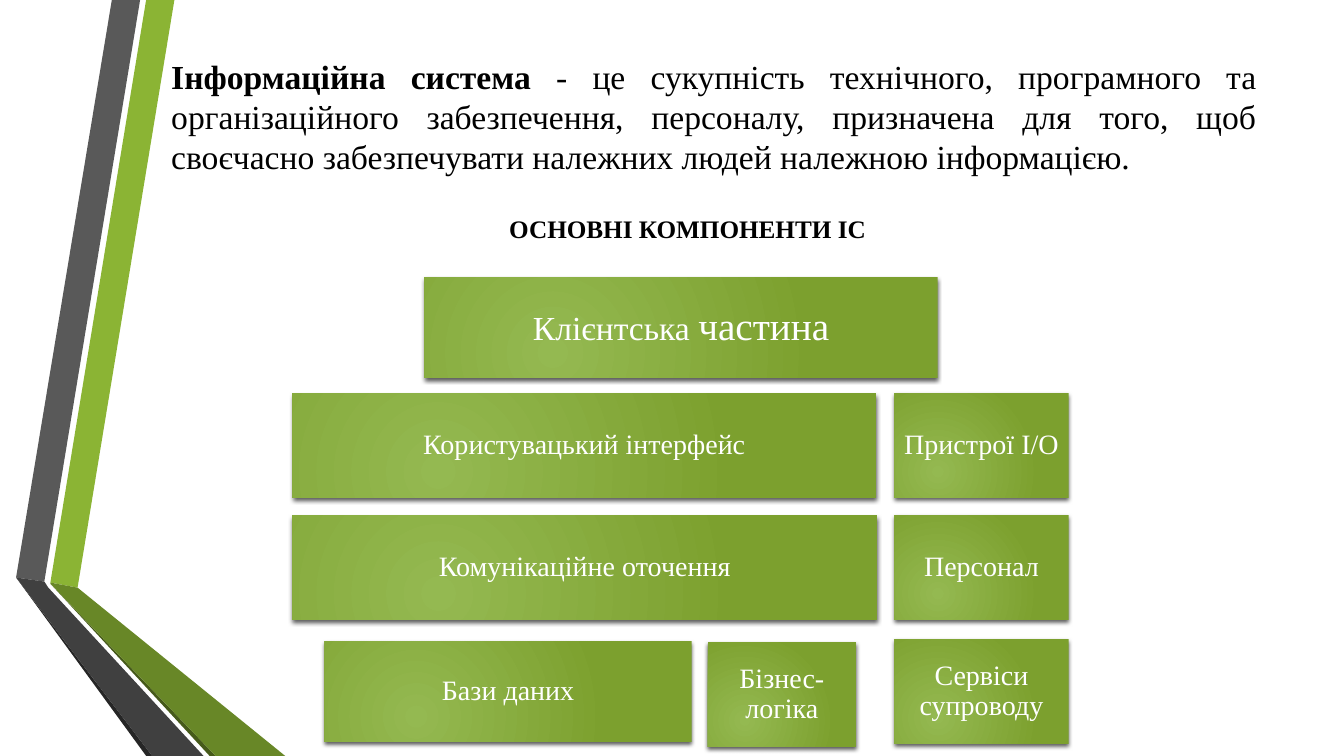
from pptx import Presentation
from pptx.dml.color import RGBColor
from pptx.enum.shapes import MSO_SHAPE as SHAPE
from pptx.enum.text import MSO_ANCHOR as ANCHOR, PP_ALIGN as ALIGN
from pptx.oxml import parse_xml
from pptx.util import Inches, Pt

NS = 'xmlns:a="http://schemas.openxmlformats.org/drawingml/2006/main"'
GRADIENT = f'''<a:gradFill {NS} rotWithShape="1"><a:gsLst>
<a:gs pos="0"><a:srgbClr val="94B951"/></a:gs>
<a:gs pos="100000"><a:srgbClr val="7CA02E"/></a:gs></a:gsLst>
<a:path path="circle"><a:fillToRect l="50000" t="100000" r="100000" b="50000"/></a:path>
</a:gradFill>'''
SHADOW = f'''<a:effectLst {NS}>
<a:outerShdw blurRad="38100" dist="25400" dir="5400000" rotWithShape="0">
<a:srgbClr val="000000"><a:alpha val="64000"/></a:srgbClr></a:outerShdw></a:effectLst>'''


def rgb(value):
    return RGBColor.from_string(value)


def write(sp, runs, align, color, inset=None, **spacing):
    tf = sp.text_frame
    tf.word_wrap = True
    tf.vertical_anchor = ANCHOR.MIDDLE
    if inset is not None:
        for side in ("left", "top", "right", "bottom"):
            setattr(tf, f"margin_{side}", Inches(inset))
    p = tf.paragraphs[0]
    p.alignment = align
    for name, value in spacing.items():
        setattr(p, name, value)
    for text, size, bold in runs:
        r = p.add_run()
        r.text = text
        font = {"name": "Times New Roman", "size": Pt(size), "bold": bold}
        for name, value in font.items():
            setattr(r.font, name, value)
        r.font.color.rgb = rgb(color)


prs = Presentation()
prs.slide_width, prs.slide_height = Inches(13.33), Inches(7.5)
s = prs.slides.add_slide(prs.slide_layouts[6])

ribbons = [
    ("8BB434", [(0.5, 5.78), (0.77, 5.83), (1.73, 0), (1.45, 0)]),
    ("595959", [(1.39, 0), (1.11, 0), (0.16, 5.73), (0.44, 5.77)]),
    ("262626", [(0.16, 5.73), (1.45, 7.5), (1.51, 7.5)]),
    ("465A1A", [(0.5, 5.79), (2.08, 7.5), (2.14, 7.5)]),
    ("688727", [(0.5, 5.78), (0.5, 5.79), (2.14, 7.5), (2.83, 7.5), (0.77, 5.83)]),
    ("404040", [(2.02, 7.5), (0.48, 5.83), (0.44, 5.77), (0.16, 5.73), (1.51, 7.5)]),
]
for color, points in ribbons:
    corners = [(Inches(x), Inches(y)) for x, y in points]
    builder = s.shapes.build_freeform(*corners[0])
    builder.add_line_segments(corners[1:])
    sp = builder.convert_to_shape()
    sp.shadow.inherit = False
    sp.fill.solid()
    sp.fill.fore_color.rgb = rgb(color)
    sp.line.fill.background()

title = s.shapes.add_textbox(Inches(1.6), Inches(0.19), Inches(10.96), Inches(1.92))
write(title, [
    ("Інформаційна система ", 24, True),
    ("- це сукупність технічного, програмного та організаційного забезпечення, "
     "персоналу, призначена для того, щоб своєчасно забезпечувати належних людей "
     "належною інформацією.", 24, False),
], ALIGN.JUSTIFY, "000000")

blocks = [
    (4.21, 2.75, 5.09, 1, 0.1, [("Клієнтська ", 24), ("частина", 28)]),
    (2.9, 3.9, 5.79, 1.04, 0.08, [("Користувацький інтерфейс", 20)]),
    (8.87, 3.9, 1.73, 1.04, 0.08, [("Пристрої I/O", 20)]),
    (2.9, 5.11, 5.8, 1.04, 0.08, [("Комунікаційне оточення", 20)]),
    (8.87, 5.11, 1.73, 1.04, 0.08, [("Персонал", 20)]),
    (3.22, 6.36, 3.64, 1, 0.08, [("Бази даних", 20)]),
    (7.02, 6.37, 1.47, 1.04, 0.08, [("Бізнес-логіка", 20)]),
    (8.87, 6.34, 1.73, 1.04, 0.08, [("Сервіси супроводу", 20)]),
]
for x, y, w, h, inset, runs in blocks:
    sp = s.shapes.add_shape(SHAPE.RECTANGLE, Inches(x), Inches(y), Inches(w), Inches(h))
    sp.line.fill.background()
    sp.line._ln.addprevious(parse_xml(GRADIENT))
    sp.line._ln.addnext(parse_xml(SHADOW))
    write(sp, [(text, size, False) for text, size in runs], ALIGN.CENTER, "FFFFFF",
          inset, line_spacing=0.9)

heading = s.shapes.add_textbox(Inches(4.36), Inches(1.96), Inches(4.92), Inches(0.61))
write(heading, [("ОСНОВНІ КОМПОНЕНТИ ІС", 18, True)], ALIGN.CENTER, "000000")

prs.save("out.pptx")
